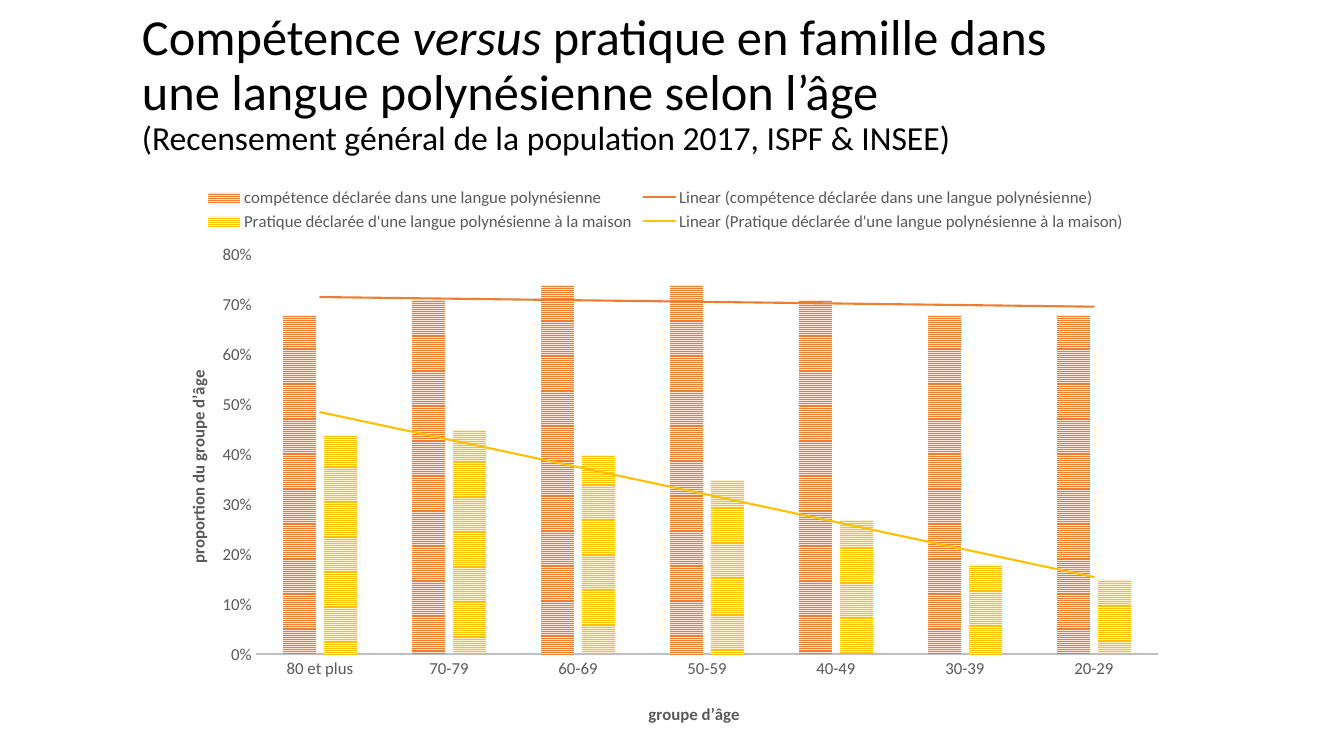
"""Build the slide comparing declared skill and home practice of a Polynesian language by age."""
import lxml.etree
import pptx
import pptx.chart.data
import pptx.dml.color
import pptx.enum.chart
import pptx.enum.dml
import pptx.enum.text
import pptx.oxml
import pptx.oxml.ns
import pptx.util

SCALE = 914400 / 100.8
FONT = "Calibri"
GREY = "595959"
NAMESPACES = pptx.oxml.ns.nsdecls("c", "a")


def px(*lengths):
    return [pptx.util.Emu(round(length * SCALE)) for length in lengths]


def color(value):
    return pptx.dml.color.RGBColor.from_string(value)


presentation = pptx.Presentation()
presentation.slide_width, presentation.slide_height = px(1344, 756)
slide = presentation.slides.add_slide(presentation.slide_layouts[6])

title = slide.shapes.add_textbox(*px(132, 22, 1009, 126))
title.text_frame.word_wrap = True
title.text_frame.vertical_anchor = pptx.enum.text.MSO_ANCHOR.MIDDLE
paragraph = title.text_frame.paragraphs[0]
paragraph.line_spacing = 0.9
title_runs = [
    ("Compétence ", 36, False),
    ("versus", 36, True),
    (" pratique en famille dans une langue polynésienne selon l’âge", 36, False),
    ("(Recensement général de la population 2017, ISPF & INSEE)", 24, False),
]
for text, size, italic in title_runs:
    if size == 24:
        paragraph.add_line_break()
    run = paragraph.add_run()
    run.text = text
    run.font.name = FONT
    run.font.size = pptx.util.Pt(size)
    run.font.italic = italic
    run.font.color.rgb = color("000000")

series_rows = [
    ("compétence déclarée dans une langue polynésienne",
     (0.68, 0.71, 0.74, 0.74, 0.71, 0.68, 0.68), "ED7D31", "FBE5D6"),
    ("Pratique déclarée d'une langue polynésienne à la maison",
     (0.44, 0.45, 0.4, 0.35, 0.27, 0.18, 0.15), "FFC000", "FFF2CC"),
]
chart_data = pptx.chart.data.CategoryChartData(number_format="0%")
chart_data.categories = ["80 et plus", "70-79", "60-69", "50-59", "40-49", "30-39", "20-29"]
for name, values, foreground, background in series_rows:
    chart_data.add_series(name, values)

chart = slide.shapes.add_chart(
    pptx.enum.chart.XL_CHART_TYPE.COLUMN_CLUSTERED, *px(153, 176, 1026, 563), chart_data
).chart
chart.has_title = False
chart.font.name = FONT
chart.font.size = pptx.util.Pt(12)
chart.font.color.rgb = color(GREY)

plot = chart.plots[0]
plot.gap_width = 164
plot.overlap = -22
plot.vary_by_categories = False
for series, (name, values, foreground, background) in zip(plot.series, series_rows):
    fill = series.format.fill
    fill.patterned()
    fill.pattern = pptx.enum.dml.MSO_PATTERN.NARROW_HORIZONTAL
    fill.fore_color.rgb = color(foreground)
    fill.back_color.rgb = color(background)
    series.format.line.fill.background()
    trendline = pptx.oxml.parse_xml(
        f'<c:trendline {NAMESPACES}><c:spPr><a:ln w="19050" cap="rnd"><a:solidFill>'
        f'<a:srgbClr val="{foreground}"/></a:solidFill></a:ln></c:spPr>'
        '<c:trendlineType val="linear"/><c:dispRSqr val="0"/><c:dispEq val="0"/></c:trendline>'
    )
    series._element.find(pptx.oxml.ns.qn("c:cat")).addprevious(trendline)

chart.has_legend = True
legend = chart.legend
legend.position = pptx.enum.chart.XL_LEGEND_POSITION.TOP
legend.include_in_layout = False
legend.font.name = FONT
legend.font.size = pptx.util.Pt(12)
legend.font.color.rgb = color(GREY)
legend_position = legend._element.find(pptx.oxml.ns.qn("c:legendPos"))
for index in (3, 2):
    legend_position.addnext(pptx.oxml.parse_xml(
        f'<c:legendEntry {NAMESPACES}><c:idx val="{index}"/><c:delete val="1"/></c:legendEntry>'
    ))

category_axis, value_axis = chart.category_axis, chart.value_axis
value_axis.minimum_scale = 0
value_axis.maximum_scale = 0.8
value_axis.major_unit = 0.1
value_axis.has_major_gridlines = False
value_axis.tick_labels.number_format = "0%"
value_axis.tick_labels.number_format_is_linked = False
value_axis.format.line.fill.background()
category_axis.format.line.color.rgb = color("BFBFBF")
category_axis.format.line.width = pptx.util.Pt(1.5)

layouts = []
for axis, text, left, top in [
    (category_axis, "groupe d’âge", 0.48, 0.93),
    (value_axis, "proportion du groupe d’âge", 0.03, 0.34),
]:
    axis.major_tick_mark = pptx.enum.chart.XL_TICK_MARK.NONE
    axis.minor_tick_mark = pptx.enum.chart.XL_TICK_MARK.NONE
    axis.tick_labels.font.name = FONT
    axis.tick_labels.font.size = pptx.util.Pt(12)
    axis.tick_labels.font.color.rgb = color(GREY)
    run = axis.axis_title.text_frame.paragraphs[0].add_run()
    run.text = text
    run.font.name = FONT
    run.font.size = pptx.util.Pt(12)
    run.font.bold = True
    run.font.color.rgb = color(GREY)
    layouts.append((axis.axis_title._element, 1, {"xMode": "edge", "yMode": "edge", "x": left, "y": top}))
body = value_axis.axis_title.text_frame._txBody.find(pptx.oxml.ns.qn("a:bodyPr"))
body.set("rot", "-5400000")
body.set("vert", "horz")

plot_area = chart._chartSpace.chart.plotArea
layouts.append((plot_area, 0, {
    "layoutTarget": "inner", "xMode": "edge", "yMode": "edge",
    "x": 0.1, "y": 0.14, "w": 0.88, "h": 0.71,
}))
for parent, position, settings in layouts:
    for existing in parent.findall(pptx.oxml.ns.qn("c:layout")):
        parent.remove(existing)
    layout = pptx.oxml.parse_xml(f"<c:layout {NAMESPACES}><c:manualLayout/></c:layout>")
    for key, value in settings.items():
        lxml.etree.SubElement(layout[0], pptx.oxml.ns.qn(f"c:{key}")).set("val", str(value))
    parent.insert(position, layout)

presentation.save("out.pptx")
